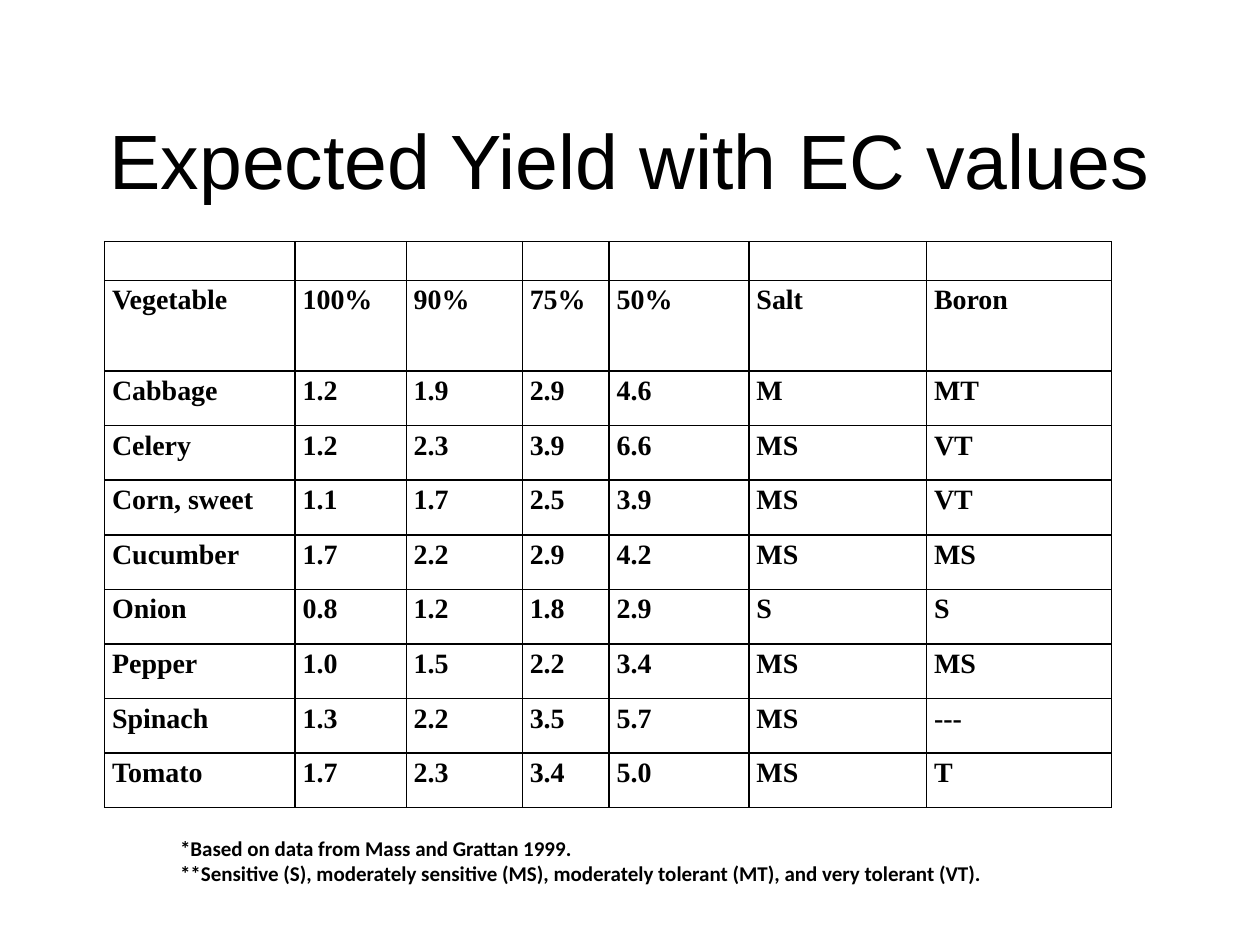
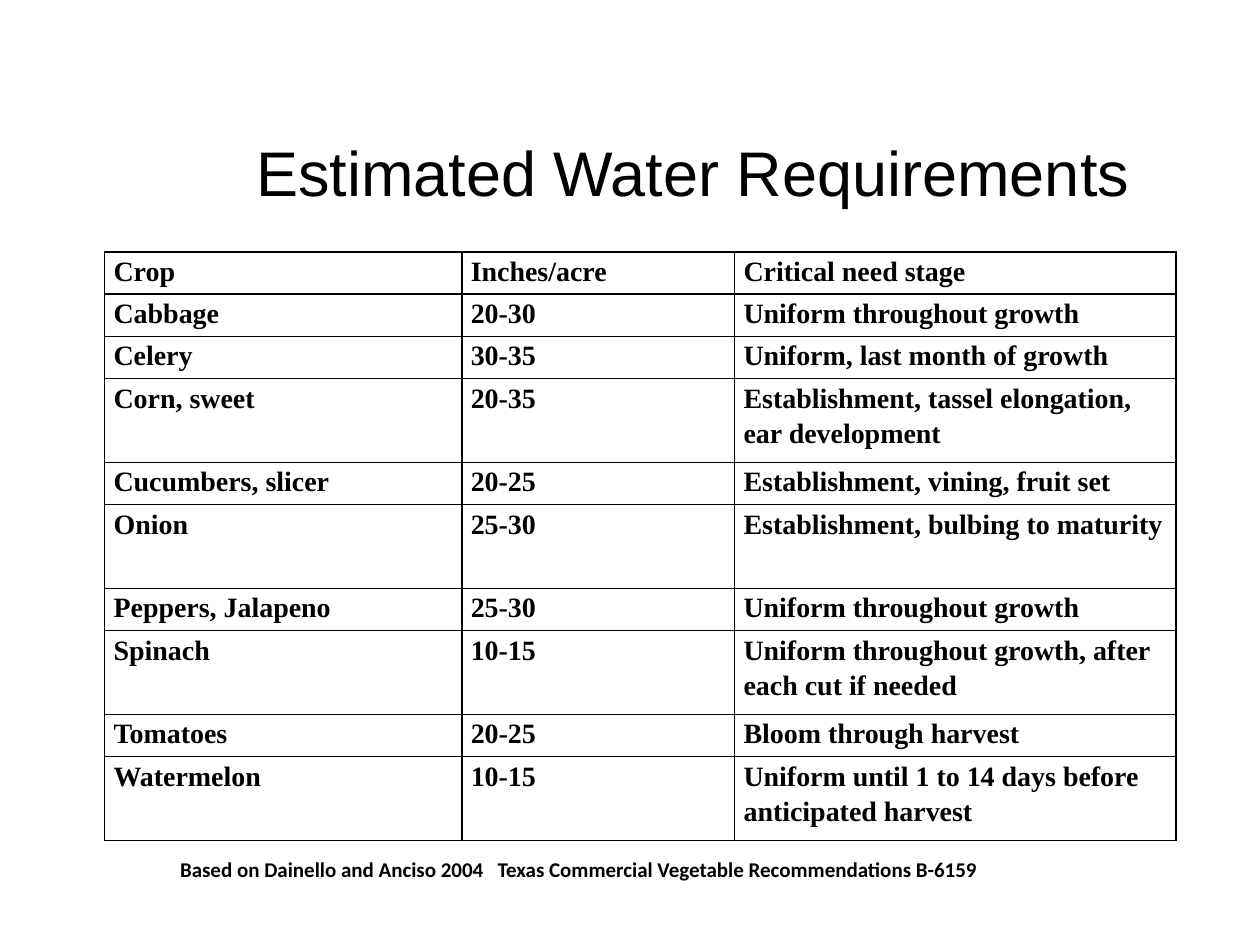
import pptx
import pptx.dml.color
import pptx.enum.text
import pptx.oxml
import pptx.oxml.ns
import pptx.util

Cm = pptx.util.Cm
Pt = pptx.util.Pt
ANCHOR = pptx.enum.text.MSO_ANCHOR
ALIGN = pptx.enum.text.PP_ALIGN

BLACK = pptx.dml.color.RGBColor(0x00, 0x00, 0x00)
WHITE = pptx.dml.color.RGBColor(0xFF, 0xFF, 0xFF)

TITLE_FONT = {"name": "Arial", "bold": False}
CELL_FONT = {"name": "Times New Roman", "size": Pt(16), "bold": True}
NOTE_FONT = {"name": "Calibri", "size": Pt(12), "bold": True}

TABLE_LEFT = 2.11
NOTE_LEFT = 3.38
LINE_SPACING = 1.15
BORDER_WIDTH = Pt(1)

YIELD_COLS = [3.84, 2.24, 2.34, 1.75, 2.82, 3.58, 3.73]
YIELD_ROWS = [
    [""] * 7,
    ["Vegetable", "100%", "90%", "75%", "50%", "Salt", "Boron"],
    ["Cabbage", "1.2", "1.9", "2.9", "4.6", "M", "MT"],
    ["Celery", "1.2", "2.3", "3.9", "6.6", "MS", "VT"],
    ["Corn, sweet", "1.1", "1.7", "2.5", "3.9", "MS", "VT"],
    ["Cucumber", "1.7", "2.2", "2.9", "4.2", "MS", "MS"],
    ["Onion", "0.8", "1.2", "1.8", "2.9", "S", "S"],
    ["Pepper", "1.0", "1.5", "2.2", "3.4", "MS", "MS"],
    ["Spinach", "1.3", "2.2", "3.5", "5.7", "MS", "---"],
    ["Tomato", "1.7", "2.3", "3.4", "5.0", "MS", "T"],
]
YIELD_NOTES = [
    "*Based on data from Mass and Grattan 1999.",
    "**Sensitive (S), moderately sensitive (MS), moderately tolerant (MT), "
    "and very tolerant (VT).",
]

WATER_COLS = [7.2, 5.5, 8.9]
WATER_ROWS = [
    ["Crop", "Inches/acre", "Critical need stage"],
    ["Cabbage", "20-30", "Uniform throughout growth"],
    ["Celery", "30-35", "Uniform, last month of growth"],
    ["Corn, sweet", "20-35", "Establishment, tassel elongation, ear development"],
    ["Cucumbers, slicer", "20-25", "Establishment, vining, fruit set"],
    ["Onion", "25-30", "Establishment, bulbing to maturity"],
    ["Peppers, Jalapeno", "25-30", "Uniform throughout growth"],
    ["Spinach", "10-15", "Uniform throughout growth, after each cut if needed"],
    ["Tomatoes", "20-25", "Bloom through harvest"],
    ["Watermelon", "10-15", "Uniform until 1 to 14 days before anticipated harvest"],
]
WATER_NOTES = [
    "Based on Dainello and Anciso 2004   "
    "Texas Commercial Vegetable Recommendations B-6159",
]


def set_attrs(obj, values):
    for name, value in values.items():
        setattr(obj, name, value)


def add_run(p, text, font):
    r = p.add_run()
    r.text = text
    set_attrs(r.font, font)
    r.font.color.rgb = BLACK


def add_text(slide, box, lines, font, anchor, align=ALIGN.LEFT):
    tf = slide.shapes.add_textbox(*map(Cm, box)).text_frame
    set_attrs(tf, {"word_wrap": True, "vertical_anchor": anchor})
    for i, line in enumerate(lines):
        p = tf.add_paragraph() if i else tf.paragraphs[0]
        p.alignment = align
        add_run(p, line, font)


def add_title(slide, box, text, size):
    font = {**TITLE_FONT, "size": Pt(size)}
    add_text(slide, box, [text], font, ANCHOR.MIDDLE, ALIGN.CENTER)


def add_borders(cell):
    # Border lines must come before the fill in the cell properties
    tc_pr = cell._tc.get_or_add_tcPr()
    for i, side in enumerate(("lnL", "lnR", "lnT", "lnB")):
        tc_pr.insert(i, pptx.oxml.parse_xml(
            f'<a:{side} {pptx.oxml.ns.nsdecls("a")} w="{BORDER_WIDTH}">'
            f'<a:solidFill><a:srgbClr val="{BLACK}"/></a:solidFill></a:{side}>'))


def add_grid(slide, top, cols, heights, rows, inset):
    size = (sum(cols), sum(heights))
    frame = slide.shapes.add_table(
        len(rows), len(cols), *map(Cm, (TABLE_LEFT, top, *size)))
    table = frame.table
    set_attrs(table, {"first_row": False, "horz_banding": False})
    for col, width in zip(table.columns, cols):
        col.width = Cm(width)
    for row, height, texts in zip(table.rows, heights, rows):
        row.height = Cm(height)
        for cell, text in zip(row.cells, texts):
            set_attrs(cell, {"margin_left": Cm(inset), "margin_right": Cm(inset),
                             "margin_top": 0, "margin_bottom": 0})
            cell.fill.background()
            add_borders(cell)
            if text:
                p = cell.text_frame.paragraphs[0]
                p.line_spacing = LINE_SPACING
                add_run(p, text, CELL_FONT)


def new_slide(prs):
    slide = prs.slides.add_slide(prs.slide_layouts[6])
    slide.background.fill.solid()
    slide.background.fill.fore_color.rgb = WHITE
    return slide


def build_yield_slide(prs):
    slide = new_slide(prs)
    add_title(slide, (1.27, 2.34, 22.86, 1.7), "Expected Yield with EC values", 44)
    # Blank band, tall header, then even rows
    heights = [0.78, 1.83] + [1.1] * (len(YIELD_ROWS) - 2)
    add_grid(slide, 4.87, YIELD_COLS, heights, YIELD_ROWS, 0.15)
    add_text(slide, (NOTE_LEFT, 16.72, 22.02, 1.27), YIELD_NOTES, NOTE_FONT,
             ANCHOR.MIDDLE)


def build_water_slide(prs):
    slide = new_slide(prs)
    add_title(slide, (3.81, 2.97, 20.32, 0.97), "Estimated Water Requirements", 36)
    # Crops with a long critical stage take a double row
    heights = [1.69 if len(row[-1]) > 32 else 0.85 for row in WATER_ROWS]
    add_grid(slide, 5.08, WATER_COLS, heights, WATER_ROWS, 0.18)
    add_text(slide, (NOTE_LEFT, 17.15, 18.21, 0.76), WATER_NOTES, NOTE_FONT,
             ANCHOR.TOP)


def main():
    prs = pptx.Presentation()
    set_attrs(prs, {"slide_width": Cm(25.4), "slide_height": Cm(19.05)})
    build_yield_slide(prs)
    build_water_slide(prs)
    prs.save("out.pptx")


if __name__ == "__main__":
    main()
